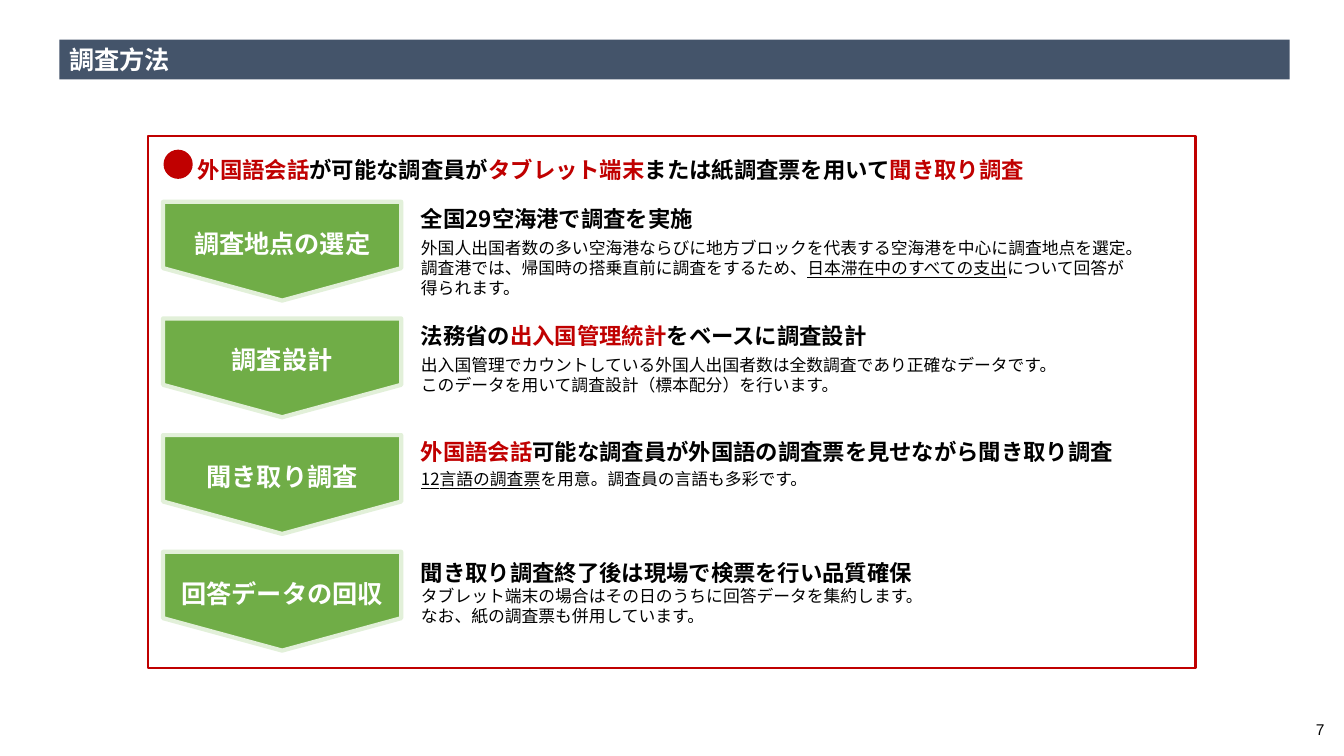
from lxml.etree import SubElement
from pptx import Presentation
from pptx.dml.color import RGBColor
from pptx.enum.shapes import MSO_SHAPE
from pptx.enum.text import MSO_ANCHOR, PP_ALIGN
from pptx.oxml.ns import qn
from pptx.util import Cm, Pt

BLACK, WHITE, RED = "000000", "FFFFFF", "C00000"
NAVY, GREEN, PALE_GREEN = "44546A", "70AD47", "E2F0D9"
JAPANESE_FONT = "Noto Sans CJK JP"
LINE_RATIO = 1.19


def add_box(kind, left, top, width, height, fill=None, line=None, line_width=1):
    shape = slide.shapes.add_shape(kind, Cm(left), Cm(top), Cm(width), Cm(height))
    shape.shadow.inherit = False
    for paint, color in ((shape.fill, fill), (shape.line.fill, line)):
        if color:
            paint.solid()
            paint.fore_color.rgb = RGBColor.from_string(color)
        else:
            paint.background()
    if line:
        shape.line.width = Pt(line_width)
    return shape


def write(paragraph, runs, size, color=BLACK, bold=False, name=JAPANESE_FONT):
    """Fill a paragraph with (text, color, underline) runs; None keeps the paragraph color."""
    font = paragraph.font
    font.size, font.bold, font.name = Pt(size), bold, name
    font.color.rgb = RGBColor.from_string(color)
    defaults = paragraph._p.pPr.find(qn("a:defRPr"))
    SubElement(defaults, qn("a:ea")).set("typeface", name)
    for text, run_color, underline in runs:
        run = paragraph.add_run()
        run.text = text
        if run_color:
            run.font.color.rgb = RGBColor.from_string(run_color)
        if underline:
            run.font.underline = True


presentation = Presentation()
presentation.slide_width, presentation.slide_height = Cm(33.87), Cm(19.05)
slide = presentation.slides.add_slide(presentation.slide_layouts[6])

# Title bar
title_bar = add_box(MSO_SHAPE.RECTANGLE, 1.5, 1, 31, 1, fill=NAVY)
title_bar.text_frame.vertical_anchor = MSO_ANCHOR.MIDDLE
title = title_bar.text_frame.paragraphs[0]
title.alignment = PP_ALIGN.LEFT
write(title, [("調査方法", None, False)], 18, WHITE, True)

# Red frame and the dot of the lead sentence
add_box(MSO_SHAPE.RECTANGLE, 3.73, 3.43, 26.4, 13.4, line=RED, line_width=1.5)
add_box(MSO_SHAPE.OVAL, 4.14, 3.79, 0.7, 0.7, fill=RED, line=RED)

# Step arrows, pointing down
steps = ["調査地点の選定", "調査設計", "聞き取り調査", "回答データの回収"]
arrow_length, arrow_width = 2.49, 6
for index, step in enumerate(steps):
    center_x, center_y = 7.11, 6.33 + 2.94 * index
    arrow = add_box(MSO_SHAPE.PENTAGON, center_x - arrow_length / 2,
                    center_y - arrow_width / 2, arrow_length, arrow_width,
                    fill=GREEN, line=PALE_GREEN, line_width=3)
    arrow.adjustments[0] = 0.328
    arrow.rotation = 90
    frame = arrow.text_frame
    frame.vertical_anchor = MSO_ANCHOR.MIDDLE
    frame._txBody.bodyPr.set("vert", "vert270")
    frame.paragraphs[0].alignment = PP_ALIGN.CENTER
    write(frame.paragraphs[0], [(step, None, False)], 18, WHITE, True)

# Lead sentence and step descriptions: left, top, width, height, gap, heading, body lines
descriptions = [
    (4.74, 3.81, 24.3, 0.94, 0,
     [("外国語会話", RED, False), ("が可能な調査員が", None, False),
      ("タブレット端末", RED, False), ("または紙調査票を用いて", None, False),
      ("聞き取り調査", RED, False)],
     []),
    (10.36, 5.05, 19.79, 2.64, 4.4,
     [("全国29空海港で調査を実施", None, False)],
     [[("外国人出国者数の多い空海港ならびに地方ブロックを代表する空海港を中心に調査地点を選定。", None, False)],
      [("調査港では、帰国時の搭乗直前に調査をするため、", None, False),
       ("日本滞在中のすべての支出", None, True), ("について回答が", None, False)],
      [("得られます。", None, False)]]),
    (10.36, 8, 19.79, 2.13, 4.4,
     [("法務省の", None, False), ("出入国管理統計", RED, False),
      ("をベースに調査設計", None, False)],
     [[("出入国管理でカウントしている外国人出国者数は全数調査であり正確なデータです。", None, False)],
      [("このデータを用いて調査設計（標本配分）を行います。", None, False)]]),
    (10.36, 10.92, 19.79, 2.06, 3,
     [("外国語会話", RED, False),
      ("可能な調査員が外国語の調査票を見せながら聞き取り調査", None, False)],
     [[("12言語の調査票", None, True), ("を用意。調査員の言語も多彩です。", None, False)]]),
    (10.36, 13.97, 19.79, 2.08, 0,
     [("聞き取り調査終了後は現場で検票を行い品質確保", None, False)],
     [[("タブレット端末の場合はその日のうちに回答データを集約します。", None, False)],
      [("なお、紙の調査票も併用しています。", None, False)]]),
]
for left, top, width, height, gap, heading, body in descriptions:
    frame = slide.shapes.add_textbox(Cm(left), Cm(top), Cm(width), Cm(height)).text_frame
    frame.word_wrap = True
    paragraph = frame.paragraphs[0]
    paragraph.line_spacing = Pt(16 * LINE_RATIO)
    write(paragraph, heading, 16, bold=True)
    for number, runs in enumerate(body):
        paragraph = frame.add_paragraph()
        paragraph.line_spacing = Pt(12 * LINE_RATIO)
        paragraph.space_before = Pt(0 if number else gap)
        write(paragraph, runs, 12)

# Page number
page_box = slide.shapes.add_textbox(Cm(32), Cm(18.01), Cm(1.63), Cm(0.71))
page_box.text_frame.word_wrap = True
page_box.text_frame.vertical_anchor = MSO_ANCHOR.MIDDLE
page_number = page_box.text_frame.paragraphs[0]
page_number.alignment = PP_ALIGN.RIGHT
write(page_number, [("7", None, False)], 11.1, name="Arial")

presentation.save("out.pptx")
